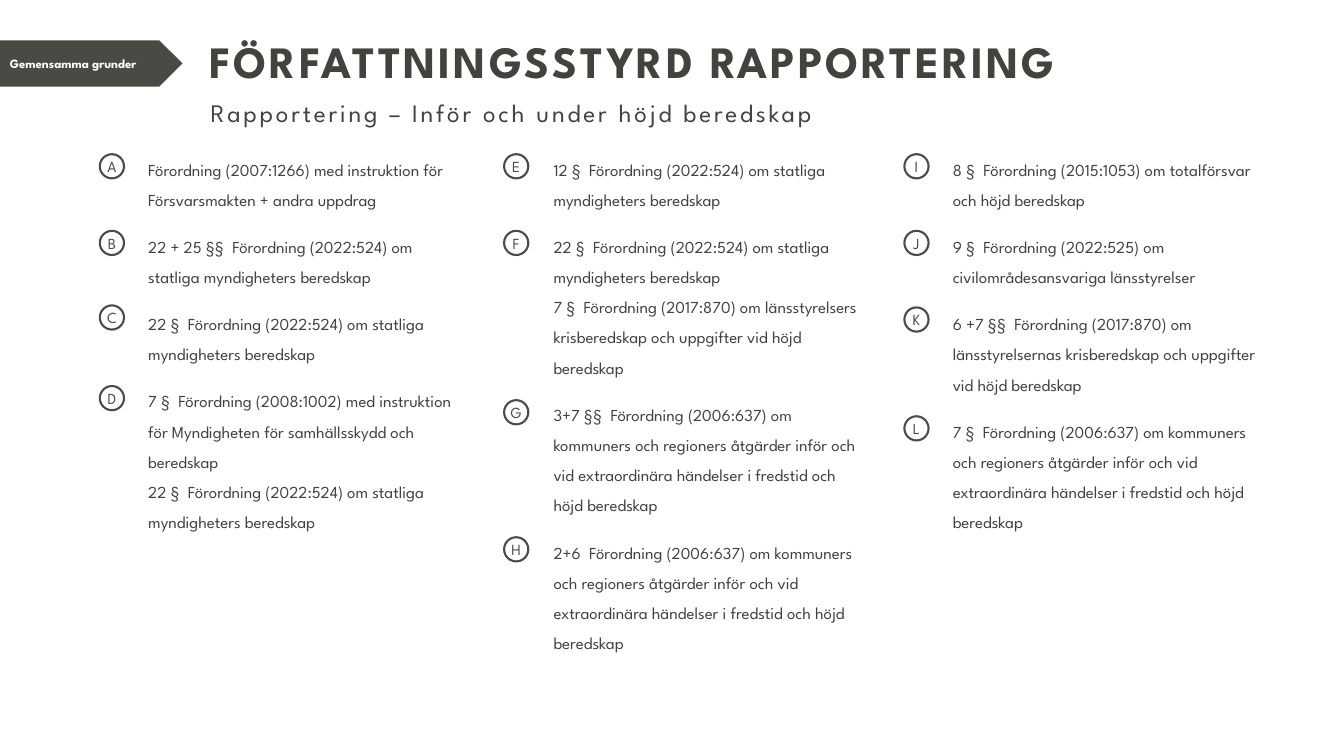
from copy import deepcopy
from dataclasses import dataclass

from pptx import Presentation
from pptx.dml.color import RGBColor
from pptx.enum.shapes import MSO_SHAPE
from pptx.enum.text import MSO_ANCHOR, MSO_AUTO_SIZE, PP_ALIGN
from pptx.oxml.ns import qn
from pptx.util import Inches, Pt

OVAL = MSO_SHAPE.OVAL
TOP, MIDDLE = MSO_ANCHOR.TOP, MSO_ANCHOR.MIDDLE
LEFT, CENTER = PP_ALIGN.LEFT, PP_ALIGN.CENTER
NO_FIT = MSO_AUTO_SIZE.NONE
SECTION_LAYOUT = 2

FONT = "League Spartan"
COLORS = {
    "heading": "43433E",
    "text": "43433D",
    "badge": "4C4B45",
    "tag": "4A4944",
    "white": "FFFFFF",
}
BADGE_SIZE = 0.24
COLUMN_TOP = 1.48


@dataclass
class Rule:
    letter: str
    badge_top: float
    text: str


@dataclass
class Column:
    badge_left: float
    text_left: float
    width: float
    height: float
    rules: list[Rule]


COLUMNS = [
    Column(0.99, 1.47, 3.09, 3.8, [
        Rule("A", 1.53, "Förordning (2007:1266) med instruktion för Försvarsmakten + andra uppdrag"),
        Rule("B", 2.29, "22 + 25 §§  Förordning (2022:524) om statliga myndigheters beredskap"),
        Rule("C", 3.03, "22 §  Förordning (2022:524) om statliga myndigheters beredskap"),
        Rule("D", 3.83, "7 §  Förordning (2008:1002) med instruktion för Myndigheten för "
             "samhällsskydd och beredskap\n"
             "22 §  Förordning (2022:524) om statliga myndigheters beredskap"),
    ]),
    Column(5, 5.49, 3.03, 5, [
        Rule("E", 1.53, "12 §  Förordning (2022:524) om statliga myndigheters beredskap"),
        Rule("F", 2.29, "22 §  Förordning (2022:524) om statliga myndigheters beredskap\n"
             "7 §  Förordning (2017:870) om länsstyrelsers krisberedskap och "
             "uppgifter vid höjd beredskap"),
        Rule("G", 3.97, "3+7 §§  Förordning (2006:637) om kommuners och regioners åtgärder "
             "inför och vid extraordinära händelser i fredstid och höjd beredskap"),
        Rule("H", 5.33, "2+6  Förordning (2006:637) om kommuners och regioners åtgärder "
             "inför och vid extraordinära händelser i fredstid och höjd beredskap"),
    ]),
    Column(8.97, 9.45, 3.03, 6, [
        Rule("I", 1.53, "8 §  Förordning (2015:1053) om totalförsvar och höjd beredskap"),
        Rule("J", 2.29, "9 §  Förordning (2022:525) om civilområdesansvariga länsstyrelser"),
        Rule("K", 3.05, "6 +7 §§  Förordning (2017:870) om länsstyrelsernas krisberedskap "
             "och uppgifter vid höjd beredskap"),
        Rule("L", 4.13, "7 §  Förordning (2006:637) om kommuners och regioners åtgärder "
             "inför och vid extraordinära händelser i fredstid och höjd beredskap"),
    ]),
]


def color(name: str) -> RGBColor:
    return RGBColor.from_string(COLORS[name])


def format_runs(para, size: float, color_name: str, bold: bool = False, spacing: float = 0) -> None:
    for span in para.runs:
        span.font.name = FONT
        span.font.size = Pt(size)
        span.font.bold = bold
        span.font.color.rgb = color(color_name)
        if spacing:
            span.font._element.set("spc", str(int(spacing * 100)))
    # Line breaks carry the same formatting as the text around them
    for line_break in para._p.findall(qn("a:br")):
        line_break.append(deepcopy(para.runs[0].font._element))


def clear_margins(frame) -> None:
    frame.margin_left = frame.margin_right = 0
    frame.margin_top = frame.margin_bottom = 0


def fill_placeholder(holder, bounds: tuple, text: str, size: float, anchor,
                     bold: bool, line_spacing: float) -> None:
    holder.left, holder.top, holder.width, holder.height = map(Inches, bounds)
    frame = holder.text_frame
    frame.text = text
    frame.auto_size = NO_FIT
    frame.vertical_anchor = anchor
    para = frame.paragraphs[0]
    para.alignment = LEFT
    para.space_before = Pt(0)
    para.line_spacing = line_spacing
    format_runs(para, size, "heading", bold, spacing=2)


def add_badge(page, left: float, rule: Rule) -> None:
    badge = page.shapes.add_shape(OVAL, Inches(left), Inches(rule.badge_top),
                                  Inches(BADGE_SIZE), Inches(BADGE_SIZE))
    badge.shadow.inherit = False
    badge.fill.solid()
    badge.fill.fore_color.rgb = color("white")
    badge.line.color.rgb = color("badge")
    badge.line.width = Pt(1.5)
    frame = badge.text_frame
    frame.text = rule.letter
    clear_margins(frame)
    frame.vertical_anchor = MIDDLE
    frame.paragraphs[0].alignment = CENTER
    format_runs(frame.paragraphs[0], 11, "badge")


def add_column(page, column: Column) -> None:
    box = page.shapes.add_textbox(Inches(column.text_left), Inches(COLUMN_TOP),
                                  Inches(column.width), Inches(column.height))
    frame = box.text_frame
    frame.word_wrap = True
    clear_margins(frame)
    for index, rule in enumerate(column.rules):
        para = frame.add_paragraph() if index else frame.paragraphs[0]
        para.text = rule.text
        para.line_spacing = 1.5
        para.space_after = Pt(12)
        format_runs(para, 12, "text")
        add_badge(page, column.badge_left, rule)


def add_tag(page, text: str) -> None:
    builder = page.shapes.build_freeform(Inches(0), Inches(0.4))
    corners = [(1.58, 0.4), (1.81, 0.63), (1.58, 0.86), (0, 0.86)]
    builder.add_line_segments([(Inches(x), Inches(y)) for x, y in corners], close=True)
    tag = builder.convert_to_shape()
    tag.shadow.inherit = False
    tag.fill.solid()
    tag.fill.fore_color.rgb = color("tag")
    tag.line.fill.background()
    frame = tag.text_frame
    frame.text = text
    frame.vertical_anchor = MIDDLE
    frame.paragraphs[0].alignment = LEFT
    format_runs(frame.paragraphs[0], 9, "white", bold=True)


def main() -> None:
    deck = Presentation()
    deck.slide_width, deck.slide_height = Inches(13.33), Inches(7.5)
    page = deck.slides.add_slide(deck.slide_layouts[SECTION_LAYOUT])

    # Title and subtitle
    fill_placeholder(page.shapes.title, (1.98, 0.35, 10.06, 0.56),
                     "FÖRFATTNINGSSTYRD RAPPORTERING", 32, MIDDLE, True, 0.9)
    fill_placeholder(page.placeholders[1], (1.99, 0.92, 9.88, 0.18),
                     "Rapportering – Inför och under höjd beredskap", 18, TOP, False, 1.0)

    # Lettered regulations
    for column in COLUMNS:
        add_column(page, column)

    # Section tag
    add_tag(page, "Gemensamma grunder")
    deck.save("out.pptx")


if __name__ == "__main__":
    main()
